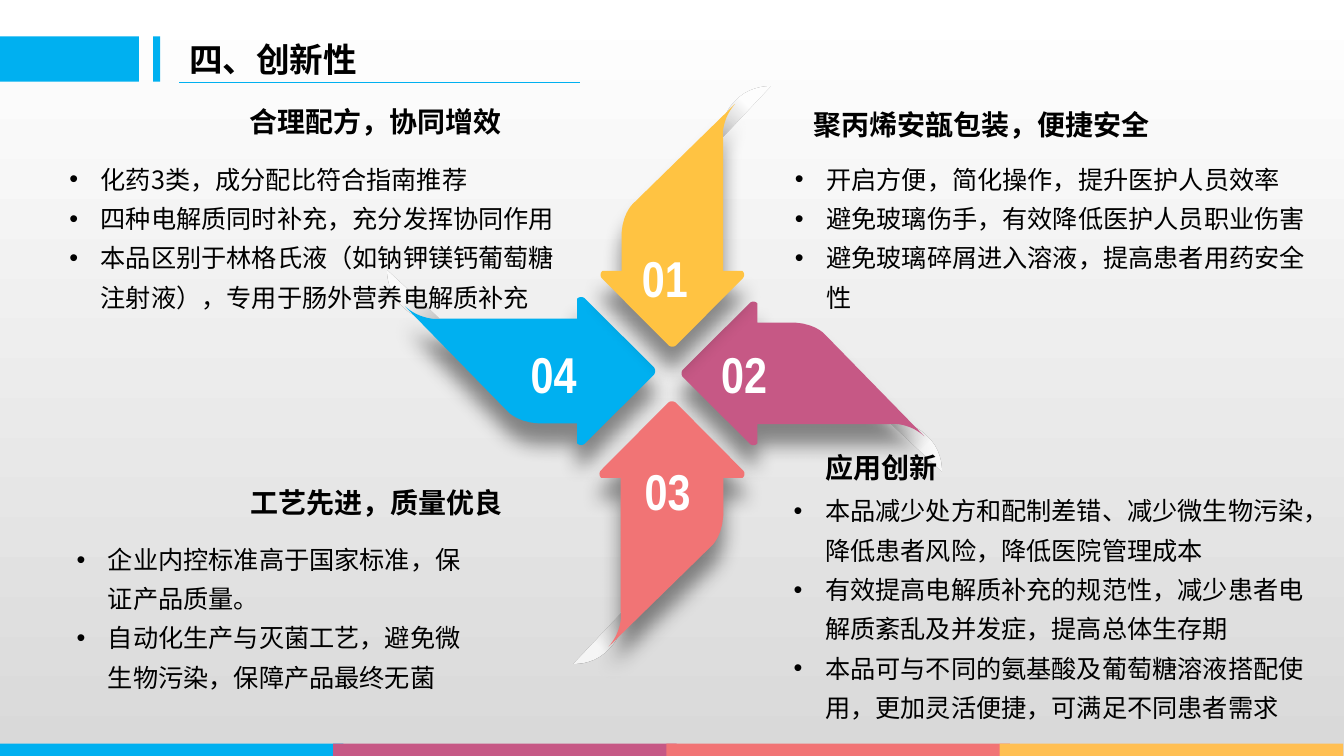
from lxml import etree
from pptx import Presentation
from pptx import util as u
from pptx.dml.color import RGBColor
from pptx.enum import shapes, text
from pptx.oxml import ns

Cm, Pt = u.Cm, u.Pt
NARROW, SANS, TIMES = "Arial Narrow", "Noto Sans CJK SC", "Times New Roman"
BLACK, WHITE = "000000", "FFFFFF"
BLUE, PURPLE, RED, YELLOW, AMBER = "00B0F0", "C65885", "F17475", "FFC342", "FFBF53"

# Content, lengths in cm
TITLE = "四、创新性"
HEADINGS = [  # text, box, right aligned
    ("合理配方，协同增效", (5.56, 2.51, 7.34, 1.12), True),
    ("聚丙烯安瓿包装，便捷安全", (19.53, 2.59, 9.7, 1.12), True),
    ("工艺先进，质量优良", (4.45, 12.12, 8.48, 1.12), True),
    ("应用创新", (20.55, 11.23, 4.6, 1.07), False),
]
LISTS = [  # box, paragraphs made of (text, font) spans
    ((1.5, 3.78, 12.98, 4.24), [
        [("化药", NARROW), ("3类", SANS), ("，成分配比符合指南推荐", NARROW)],
        [("四种电解质同时补充，充分发挥协同作用", NARROW)],
        [("本品区别于林格氏液（如钠钾镁钙葡萄糖注射液），专用于肠外营养电解质补充", TIMES)]]),
    ((19.79, 3.78, 13.74, 4.24), [
        [("开启方便，简化操作，提升医护人员效率", NARROW)],
        [("避免玻璃伤手，有效降低医护人员职业伤害", NARROW)],
        [("避免玻璃碎屑进入溶液，提高患者用药安全性", NARROW)]]),
    ((1.68, 13.36, 10.64, 4.62), [
        [("企业内控标准高于国家标准，保证产品质量。", NARROW)],
        [("自动化生产与灭菌工艺，避免微生物污染，保障产品最终无菌", NARROW)]]),
    ((19.76, 12.14, 13.59, 6.4), [
        [("本品减少处方和配制差错、减少微生物污染，降低患者风险，降低医院管理成本", NARROW)],
        [("有效提高电解质补充的规范性，减少患者电解质紊乱及并发症，提高总体生存期", NARROW)],
        [("本品可与不同的氨基酸及葡萄糖溶液搭配使用，更加灵活便捷，可满足不同患者需求", NARROW)]]),
]
ARROWS = [  # number, number box, colour, tip, heading, scale
    ("04", (13.13, 8.53, 1.85, 1.8), BLUE, (16.53, 9.35), (1, 0), 1),
    ("02", (17.93, 8.53, 1.85, 1.8), PURPLE, (17.17, 9.41), (-1, 0), 0.97),
    ("01", (15.93, 6.1, 1.7, 1.8), YELLOW, (16.95, 8.75), (0, 1), 0.97),
    ("03", (16, 11.46, 1.93, 1.8), RED, (16.94, 10.1), (0, -1), 0.98),
]
# Outlines as (distance behind tip, offset to the side); three pairs make a curve
ARROW_OUTLINE = [
    (1.78, 1.82), (0.05, 0.1), ((0, 0.04), (0, -0.04), (0.05, -0.1)), (1.78, -1.82),
    ((1.83, -1.88), (1.93, -1.88), (1.98, -1.82)), (1.98, -1.32), (5.41, -1.32),
    ((5.41, -1.32), (5.51, -1.3), (5.66, -1.32)),
    ((5.97, -1.37), (6.17, -1.5), (6.32, -1.63)), (3.73, 1.02),
    ((3.73, 1.02), (3.43, 1.37), (2.69, 1.32)), (1.98, 1.32), (1.98, 1.82),
    ((1.93, 1.88), (1.83, 1.88), (1.78, 1.82)),
]
CURL_OUTLINE = [
    (5.41, -1.27), (6.76, -2.54), ((6.76, -2.54), (6.78, -2.08), (6.48, -1.73)),
    (6.3, -1.55), ((6.15, -1.42), (5.92, -1.32), (5.64, -1.27)),
]

deck = Presentation()
deck.slide_width, deck.slide_height = Cm(33.88), Cm(19.05)
page = deck.slides.add_slide(deck.slide_layouts[6])


def color(code):
    return RGBColor.from_string(code)


def add_xml(parent, xml, index):
    parent.insert(index, etree.fromstring(xml.replace(">", f" {ns.nsdecls('a')}>", 1)))


def add_bar(left, top, width, height, fill):
    bar = page.shapes.add_shape(shapes.MSO_SHAPE.RECTANGLE, *map(Cm, (left, top, width, height)))
    bar.shadow.inherit = False
    bar.fill.solid()
    bar.fill.fore_color.rgb = color(fill)
    bar.line.fill.background()


def add_text(place, paragraphs, size, ink=BLACK, bold=False, wrap=True):
    box = page.shapes.add_textbox(*map(Cm, place))
    frame = box.text_frame
    frame.word_wrap = wrap
    for index, spans in enumerate(paragraphs):
        para = frame.paragraphs[0] if index == 0 else frame.add_paragraph()
        para.font.size, para.font.bold = Pt(size), bold
        para.font.color.rgb = color(ink)
        for words, font in spans:
            span = para.add_run()
            span.text = words
            span.font.name = font
            span.font.size, span.font.bold = Pt(size), bold
            span.font.color.rgb = color(ink)
    return frame


def flatten(outline, steps=8):
    points = []
    for part in outline:
        if len(part) == 2:
            points.append(part)
            continue
        controls = (points[-1], *part)
        for step in range(1, steps + 1):
            t = step / steps
            weights = ((1 - t) ** 3, 3 * t * (1 - t) ** 2, 3 * t * t * (1 - t), t ** 3)
            points.append(tuple(sum(w * c[axis] for w, c in zip(weights, controls))
                                for axis in (0, 1)))
    return points


def add_outline(outline, tip, heading, scale):
    (x, y), (dx, dy) = tip, heading
    points = [(Cm(x + scale * (-back * dx - side * dy)), Cm(y + scale * (-back * dy + side * dx)))
              for back, side in flatten(outline)]
    builder = page.shapes.build_freeform(*points[0])
    builder.add_line_segments(points[1:], close=True)
    piece = builder.convert_to_shape()
    piece.line.fill.background()
    piece.shadow.inherit = False
    return piece


# Background
backdrop = page.background.fill
backdrop.gradient()
backdrop.gradient_angle = 270
for stop, shade in zip(backdrop.gradient_stops, (WHITE, "D9D9D9")):
    stop.color.rgb = color(shade)

# Title band and footer stripes
add_bar(3.86, 0.92, 0.18, 1.14, BLUE)
add_bar(0, 0.92, 3.5, 1.14, BLUE)
rule = page.shapes.add_connector(shapes.MSO_CONNECTOR.STRAIGHT,
                                 Cm(4.52), Cm(2.07), Cm(14.61), Cm(2.07))
rule.line.color.rgb = color(BLUE)
rule.line.width = Pt(0.75)
add_xml(rule._element.spPr, "<a:effectLst></a:effectLst>", len(rule._element.spPr))
for index, fill in enumerate((BLUE, PURPLE, RED, AMBER)):
    add_bar(index * 8.4, 18.74, 8.66, 0.32, fill)

# Pinwheel: white curl and coloured arrow for each direction
for number, place, fill, tip, heading, scale in ARROWS:
    turn = {(1, 0): 0, (0, 1): 90, (-1, 0): 180, (0, -1): 270}[heading]
    curl = add_outline(CURL_OUTLINE, tip, heading, scale)
    add_xml(curl._element.spPr, '<a:gradFill><a:gsLst>'
            '<a:gs pos="0"><a:srgbClr val="B0B0B0"><a:alpha val="76000"/></a:srgbClr></a:gs>'
            '<a:gs pos="59000"><a:srgbClr val="FFFFFF"><a:alpha val="73000"/></a:srgbClr></a:gs>'
            f'</a:gsLst><a:lin ang="{(225 + turn) % 360 * 60000}" scaled="0"/></a:gradFill>', 2)
    arrow = add_outline(ARROW_OUTLINE, tip, heading, scale)
    arrow.fill.solid()
    arrow.fill.fore_color.rgb = color(fill)
    effects = arrow._element.spPr.find(ns.qn("a:effectLst"))
    add_xml(effects, f'<a:outerShdw blurRad="{Pt(14)}" dist="{Pt(15)}" dir="5400000" '
            'rotWithShape="0"><a:srgbClr val="000000"><a:alpha val="43000"/></a:srgbClr>'
            '</a:outerShdw>', 0)
for number, place, *_ in ARROWS:
    add_text(place, [[(number, NARROW)]], 36, WHITE, bold=True, wrap=False)

# Title, headings and bullet lists
title = add_text((4.52, 0.92, 10.08, 1.14), [[(TITLE, SANS)]], 24, bold=True)
title.vertical_anchor = text.MSO_ANCHOR.MIDDLE
for words, place, right in HEADINGS:
    heading_frame = add_text(place, [[(words, NARROW)]], 20, bold=True)
    if right:
        heading_frame.paragraphs[0].alignment = text.PP_ALIGN.RIGHT
for place, paragraphs in LISTS:
    for para in add_text(place, paragraphs, 18).paragraphs:
        para.line_spacing = 1.3
        props = para._p.get_or_add_pPr()
        props.set("marL", str(Cm(0.79)))
        props.set("indent", str(-Cm(0.79)))
        add_xml(props, '<a:buFont typeface="Arial"></a:buFont>', 1)
        add_xml(props, '<a:buChar char="•"></a:buChar>', 2)

deck.save("out.pptx")
